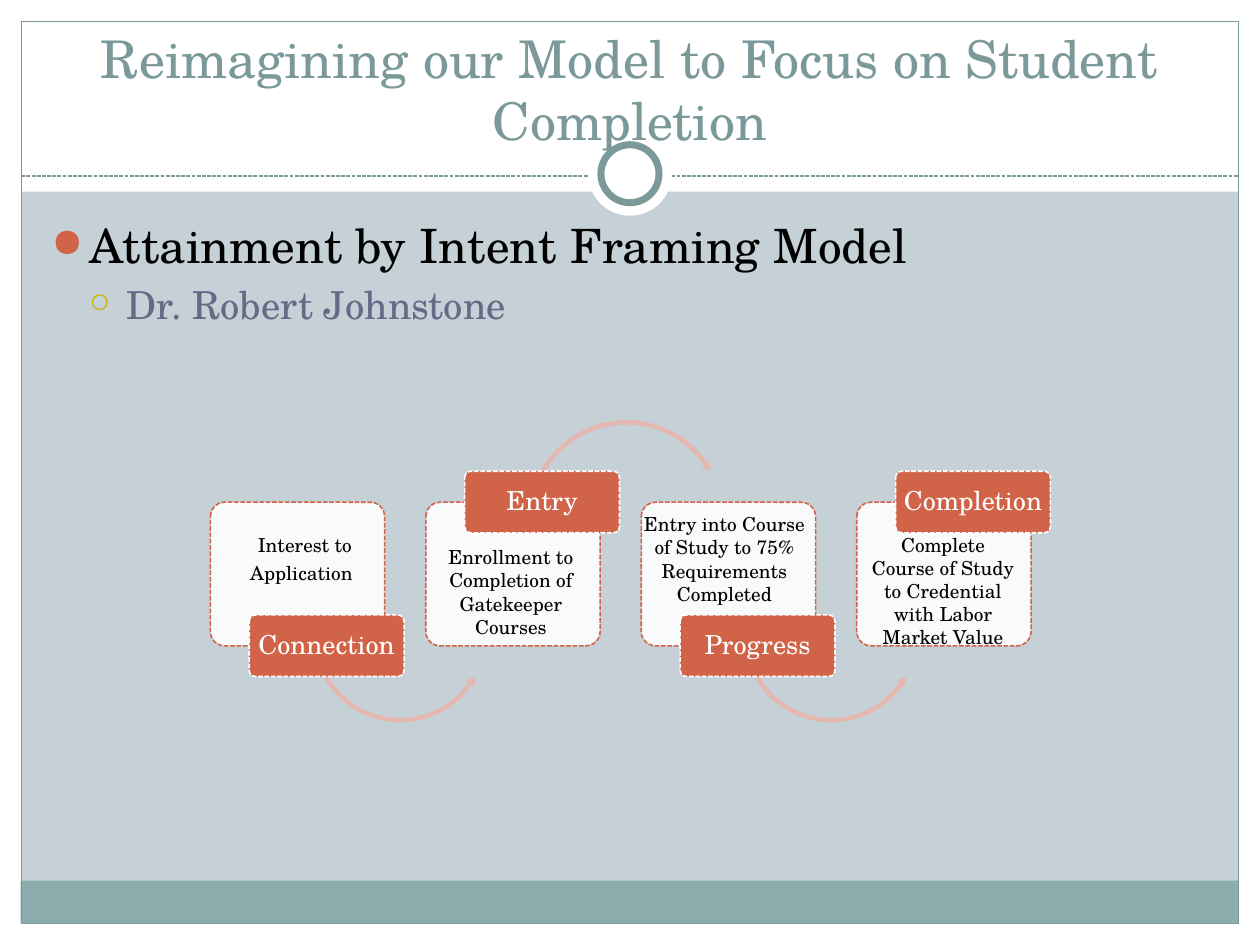
"""Build the slide on a completion model: four linked stages under a framed title."""
from pptx import Presentation
from pptx.dml.color import RGBColor
from pptx.enum.dml import MSO_LINE
from pptx.enum.shapes import MSO_CONNECTOR, MSO_SHAPE as SHAPE
from pptx.enum.text import MSO_ANCHOR as ANCHOR, PP_ALIGN as ALIGN
from pptx.oxml.ns import qn
from pptx.util import Pt
from lxml.etree import SubElement

FONT = "TeX Gyre Schola"
WHITE = RGBColor(0xFF, 0xFF, 0xFF)
BLACK = RGBColor(0, 0, 0)
SKY = RGBColor(0xC5, 0xD1, 0xD7)
TEAL = RGBColor(0x7C, 0x99, 0x9A)
BAND = RGBColor(0x8C, 0xAD, 0xAE)
RUST = RGBColor(0xD1, 0x63, 0x49)
PINK = RGBColor(0xE5, 0xB7, 0xB1)
GOLD = RGBColor(0xCC, 0xB4, 0x00)
SLATE = RGBColor(0x64, 0x6B, 0x86)

CARD_LEFT, CARD_PITCH = 120.24, 123.12
LABEL_TOPS = (351.4, 269.3)
ARROWS = (
    (SHAPE.LEFT_CIRCULAR_ARROW, 311, 103.7, (0.025, 3.094, 20.849, 90.245, 0.03)),
    (SHAPE.CIRCULAR_ARROW, 238.3, 115.9, (0.023, 2.738, 195.507, 125.755, 0.026)),
)
STAGES = ("Connection", "Entry", "Progress", "Completion")
CAPTIONS = (
    ((123.1, 301, 102.2, 37.4), (("Interest to Application", 11), (" ", 14))),
    ((241.9, 308.2, 100.1, 60.5),
     (("Enrollment to Completion of Gatekeeper Courses", 11),)),
    ((360, 289.4, 108, 60.5),
     (("Entry into Course of Study to 75% Requirements Completed", 11),)),
    ((489.6, 301, 98.6, 74.2),
     (("Complete Course of Study to Credential with Labor Market Value", 11),)),
)


def add_shape(slide, kind, box, fill=None, line=None, width=0.75, dash=None, adj=()):
    """Add a preset shape with a plain fill and outline."""
    sp = slide.shapes.add_shape(kind, *map(Pt, box))
    sp.shadow.inherit = False
    if fill is None:
        sp.fill.background()
    else:
        sp.fill.solid()
        sp.fill.fore_color.rgb = fill
    if line is None:
        sp.line.fill.background()
    else:
        sp.line.color.rgb = line
        sp.line.width = Pt(width)
        if dash:
            sp.line.dash_style = dash
    for i, value in enumerate(adj):
        sp.adjustments[i] = value
    return sp


def add_run(p, text, size, color):
    """Append one styled run to a paragraph."""
    r = p.add_run()
    r.text = text
    r.font.name = FONT
    r.font.size = Pt(size)
    r.font.color.rgb = color


def add_text(slide, box, anchor=ANCHOR.TOP):
    """Add a wrapping text box and return its text frame."""
    tf = slide.shapes.add_textbox(*map(Pt, box)).text_frame
    tf.word_wrap = True
    tf.vertical_anchor = anchor
    return tf


def set_bullet(p, char, color, percent, margin):
    """Give a paragraph a hanging bullet."""
    pPr = p._p.get_or_add_pPr()
    pPr.set("marL", str(Pt(margin)))
    pPr.set("indent", str(-Pt(21.6)))
    clr = SubElement(pPr, qn("a:buClr"))
    SubElement(clr, qn("a:srgbClr"), val=str(color))
    SubElement(pPr, qn("a:buSzPct"), val=str(percent * 1000))
    SubElement(pPr, qn("a:buChar"), char=char)


def add_rule(slide, x1, x2, y):
    """Add the dashed rule below the title."""
    cn = slide.shapes.add_connector(MSO_CONNECTOR.STRAIGHT, Pt(x1), Pt(y), Pt(x2), Pt(y))
    cn.line.color.rgb = TEAL
    cn.line.width = Pt(0.75)
    cn.line.dash_style = MSO_LINE.SQUARE_DOT
    SubElement(cn._element.spPr, qn("a:effectLst"))


def add_frame(slide):
    """Draw the white margins, bottom band, border, rule and ring."""
    for box in ((0, 527.8, 720, 12.2), (0, 0, 720, 109.5),
                (0, 0, 12.2, 540), (707.8, 0, 12.2, 540)):
        add_shape(slide, SHAPE.RECTANGLE, box, WHITE)
    add_shape(slide, SHAPE.RECTANGLE, (11.8, 503.3, 695.8, 24.5), BAND)
    add_shape(slide, SHAPE.RECTANGLE, (12.2, 12.2, 695.6, 515.6), line=TEAL)
    add_rule(slide, 12.2, 707.8, 100.6)
    add_shape(slide, SHAPE.OVAL, (336, 75.3, 48, 48), WHITE)
    add_shape(slide, SHAPE.OVAL, (343.4, 82.7, 33.2, 33.2), WHITE, TEAL, 4)


def add_title(slide, text):
    """Add the centred slide title."""
    p = add_text(slide, (24, 18, 672, 72), ANCHOR.BOTTOM).paragraphs[0]
    p.alignment = ALIGN.CENTER
    add_run(p, text, 29.7, TEAL)


def add_body(slide):
    """Add the two-level bullet list."""
    tf = add_text(slide, (22.3, 120.2, 669.6, 360))
    p = tf.paragraphs[0]
    p.space_before = Pt(5.4)
    set_bullet(p, "●", RUST, 85, 21.6)
    add_run(p, "Attainment by Intent Framing Model", 27, BLACK)
    p = tf.add_paragraph()
    p.level = 1
    p.space_before = Pt(4.4)
    set_bullet(p, "○", GOLD, 70, 43.2)
    add_run(p, "Dr. Robert Johnstone", 22, SLATE)


def add_stage(slide, i, name):
    """Add one stage: card, arrow to the next stage and label."""
    left = CARD_LEFT + i * CARD_PITCH
    dash = MSO_LINE.SQUARE_DOT
    card = add_shape(slide, SHAPE.ROUNDED_RECTANGLE, (left, 287, 99.6, 82.1),
                     WHITE, RUST, 0.9, dash, (0.1,))
    color = card._element.spPr.find(qn("a:solidFill"))[0]
    SubElement(color, qn("a:alpha"), val="90000")
    if i < len(STAGES) - 1:
        kind, top, size, adj = ARROWS[i % 2]
        add_shape(slide, kind, (left + 56.7, top, size, size), PINK, adj=adj)
    label = add_shape(slide, SHAPE.ROUNDED_RECTANGLE,
                      (left + 22.2, LABEL_TOPS[i % 2], 88.5, 35.2),
                      RUST, WHITE, 0.9, dash, (0.1,))
    tf = label.text_frame
    tf.word_wrap = True
    tf.vertical_anchor = ANCHOR.MIDDLE
    tf.margin_left = tf.margin_right = Pt(2)
    tf.margin_top = tf.margin_bottom = Pt(1.5)
    p = tf.paragraphs[0]
    p.alignment = ALIGN.CENTER
    p.line_spacing = 0.9
    add_run(p, name, 15, WHITE)


def add_caption(slide, box, runs):
    """Add the centred description of a stage."""
    p = add_text(slide, box).paragraphs[0]
    p.alignment = ALIGN.CENTER
    for text, size in runs:
        add_run(p, text, size, BLACK)


def main():
    """Build and save the slide."""
    prs = Presentation()
    prs.slide_width, prs.slide_height = Pt(720), Pt(540)
    slide = prs.slides.add_slide(prs.slide_layouts[6])
    slide.background.fill.solid()
    slide.background.fill.fore_color.rgb = SKY
    add_frame(slide)
    add_title(slide, "Reimagining our Model to Focus on Student Completion")
    add_body(slide)
    for i, name in enumerate(STAGES):
        add_stage(slide, i, name)
    for box, runs in CAPTIONS:
        add_caption(slide, box, runs)
    prs.save("out.pptx")


if __name__ == "__main__":
    main()
